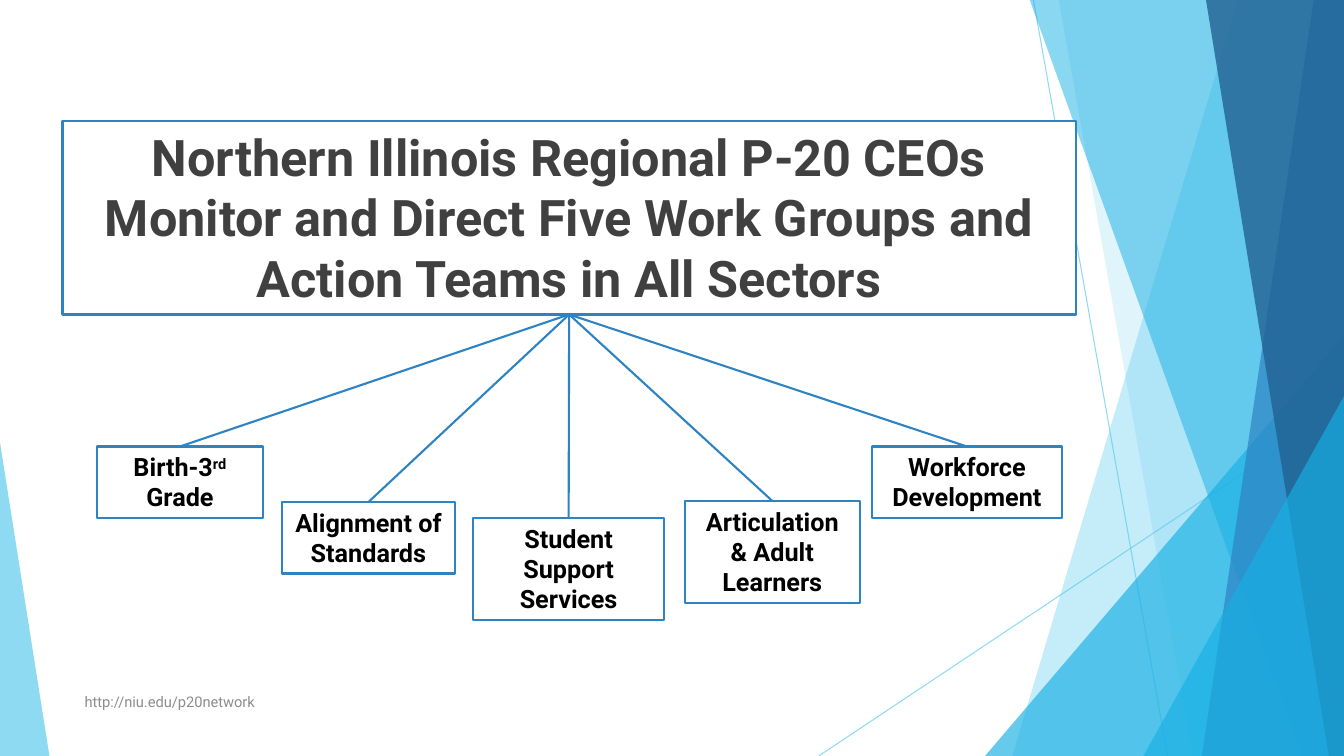
from lxml.etree import SubElement
from pptx import Presentation
from pptx.dml.color import RGBColor
from pptx.enum.shapes import MSO_CONNECTOR, MSO_SHAPE
from pptx.enum.text import MSO_ANCHOR, MSO_AUTO_SIZE, PP_ALIGN
from pptx.oxml.ns import qn
from pptx.util import Inches, Pt

WHITE = RGBColor(0xFF, 0xFF, 0xFF)
BLACK = RGBColor(0x00, 0x00, 0x00)
DARK = RGBColor(0x40, 0x40, 0x40)
GRAY = RGBColor(0x8C, 0x8C, 0x8C)
SKY = RGBColor(0x5F, 0xCB, 0xEF)
CYAN = RGBColor(0x17, 0xB0, 0xE4)
BLUE = RGBColor(0x2E, 0x83, 0xC3)
NAVY = RGBColor(0x22, 0x62, 0x92)
FONT = "Roboto"
WIDTH, HEIGHT = 13.33, 7.5

# Text and box (left, top, width, height) of each work group; ^ marks a raised part
GROUPS = [
    ("Birth-3^rd^ Grade", (0.96, 4.43, 1.65, 0.71)),
    ("Alignment of Standards", (2.8, 4.98, 1.71, 0.71)),
    ("Student Support Services", (4.69, 5.14, 1.9, 1.01)),
    ("Articulation & Adult Learners", (6.79, 4.97, 1.74, 1.01)),
    ("Workforce Development", (8.65, 4.43, 1.88, 0.71)),
]


def fade(fill, alpha):
    """Make a solid fill see-through; alpha is a percentage."""
    color = fill._xPr.find(qn("a:solidFill"))[0]
    SubElement(color, qn("a:alpha")).set("val", str(alpha * 1000))


def tint(shape, color, alpha):
    shape.shadow.inherit = False
    shape.fill.solid()
    shape.fill.fore_color.rgb = color
    fade(shape.fill, alpha)
    shape.line.fill.background()


def frame(shape):
    """White box with a blue outline that grows with its text."""
    shape.fill.solid()
    shape.fill.fore_color.rgb = WHITE
    shape.line.color.rgb = BLUE
    shape.line.width = Pt(1.5)
    text = shape.text_frame
    text.word_wrap = True
    text.auto_size = MSO_AUTO_SIZE.SHAPE_TO_FIT_TEXT
    text.vertical_anchor = MSO_ANCHOR.TOP
    return text


def style(run, size, color, bold=False):
    run.font.name = FONT
    run.font.size = Pt(size)
    run.font.bold = bold
    run.font.color.rgb = color


def place(shape, box):
    shape.left, shape.top, shape.width, shape.height = map(Inches, box)


def add_line(slide, start, end, color, width):
    line = slide.shapes.add_connector(
        MSO_CONNECTOR.STRAIGHT, *map(Inches, start + end))
    line.line.color.rgb = color
    line.line.width = Pt(width)
    SubElement(line._element.spPr, qn("a:effectLst"))
    return line


def add_band(slide, top, right, base, color, alpha):
    """Four-sided band: x of its top left, top right and bottom left corners."""
    points = [(top, -0.01), (right, -0.01), (right, HEIGHT), (base, HEIGHT)]
    points = [(Inches(x), Inches(y)) for x, y in points]
    form = slide.shapes.build_freeform(*points[0])
    form.add_line_segments(points[1:], close=True)
    tint(form.convert_to_shape(), color, alpha)


def add_wedge(slide, left, width, height, apex, color, alpha):
    """Triangle that stands on the bottom edge of the slide."""
    wedge = slide.shapes.add_shape(
        MSO_SHAPE.ISOSCELES_TRIANGLE,
        *map(Inches, (left, HEIGHT - height, width, height)))
    wedge.adjustments[0] = apex
    tint(wedge, color, alpha)


def add_decor(slide, right):
    # Thin lines
    for start, end in [((10.25, 0), (11.58, HEIGHT)),
                       ((right, 4.03), (8.12, HEIGHT))]:
        line = add_line(slide, start, end, SKY, 0.75)
        fade(line.line.fill, 70)
    # Bands and wedges, back to front
    add_band(slide, 12.28, right, 10.04, SKY, 36)
    add_band(slide, 10.5, right, 11.83, SKY, 20)
    add_wedge(slide, right - 3.56, 3.56, 4.17, 1, CYAN, 66)
    add_band(slide, 10.21, right, 12.91, CYAN, 50)
    add_band(slide, 13.03, right, 11.92, BLUE, 70)
    add_band(slide, 11.96, right, 13.18, NAVY, 80)
    add_wedge(slide, right - 1.99, 1.99, 3.57, 1, CYAN, 66)
    add_wedge(slide, 0, 0.49, 3.11, 0, SKY, 70)


def add_title(slide, box):
    title = slide.shapes.title
    place(title, box)
    text = frame(title)
    text.text = ("Northern Illinois Regional P-20 CEOs\n"
                 "Monitor and Direct Five Work Groups and "
                 "Action Teams in All Sectors")
    for para in text.paragraphs:
        para.alignment = PP_ALIGN.CENTER
        style(para.runs[0], 36, DARK, True)
    # Bring the title in front of the bands
    slide.shapes._spTree.append(title._element)
    return title


def add_group(slide, label, box, title):
    shape = slide.shapes.add_shape(MSO_SHAPE.RECTANGLE, *map(Inches, box))
    shape.shadow.inherit = False
    para = frame(shape).paragraphs[0]
    para.alignment = PP_ALIGN.CENTER
    for i, part in enumerate(label.split("^")):
        run = para.add_run()
        run.text = part
        style(run, 18, BLACK, True)
        if i % 2:
            run.font._element.set("baseline", "30000")
    # Join the top of the box to the bottom of the title
    line = add_line(slide, (0, 0), (0, 0), BLUE, 1.5)
    line.begin_connect(shape, 0)
    line.end_connect(title, 2)


def add_footer(slide, box):
    text = slide.shapes.add_textbox(*map(Inches, box)).text_frame
    text.word_wrap = True
    text.vertical_anchor = MSO_ANCHOR.MIDDLE
    text.text = "http://niu.edu/p20network"
    style(text.paragraphs[0].runs[0], 10.5, GRAY)


def main():
    deck = Presentation()
    deck.slide_width, deck.slide_height = Inches(WIDTH), Inches(HEIGHT)
    slide = deck.slides.add_slide(deck.slide_layouts[5])
    add_decor(slide, WIDTH)
    title = add_title(slide, (0.62, 1.2, 10.05, 1.92))
    for label, box in GROUPS:
        add_group(slide, label, box, title)
    add_footer(slide, (0.74, 6.76, 6.89, 0.4))
    deck.save("out.pptx")


if __name__ == "__main__":
    main()
